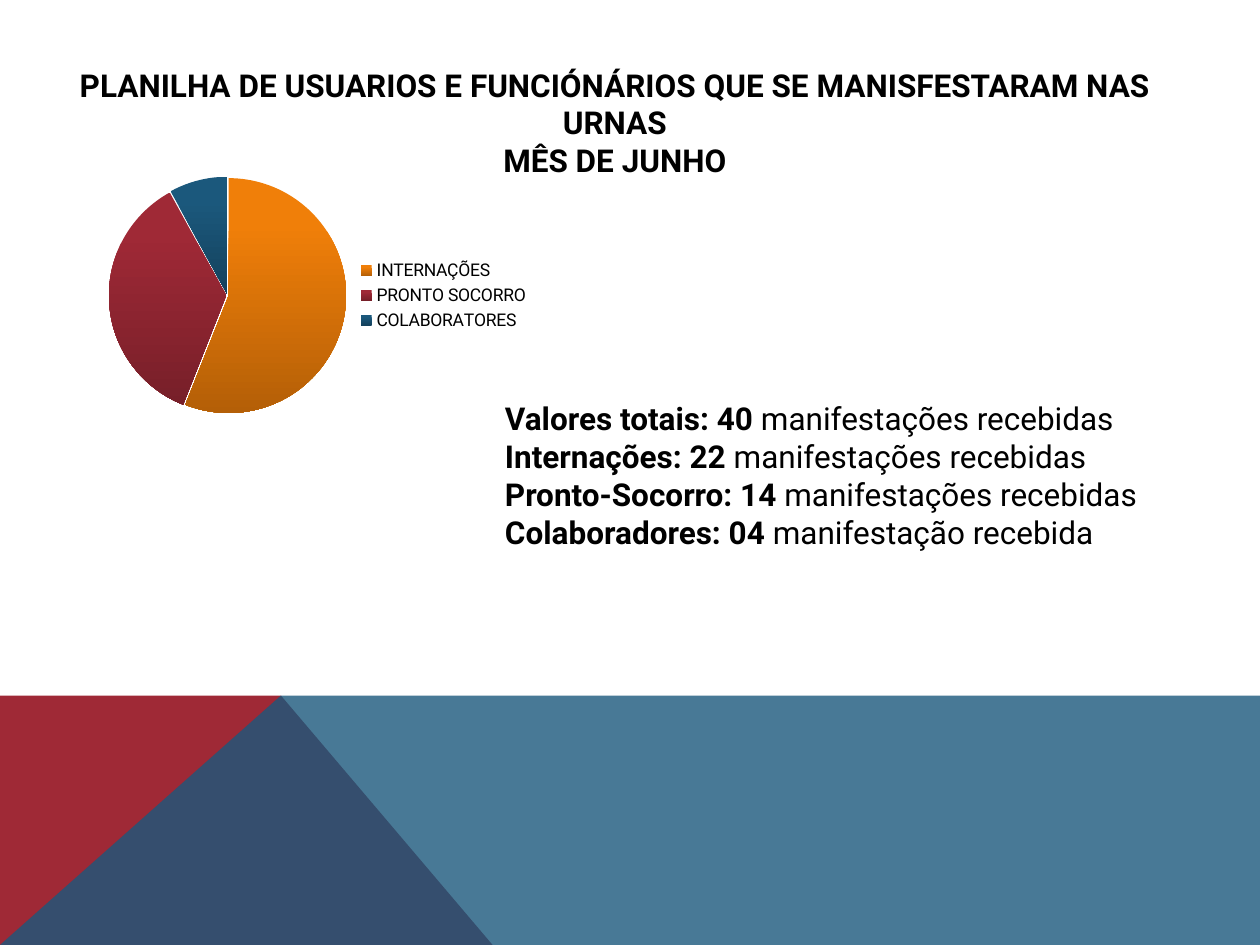
from lxml.etree import SubElement
from pptx import Presentation
from pptx.chart.data import CategoryChartData
from pptx.dml.color import RGBColor
from pptx.enum.chart import XL_CHART_TYPE, XL_LEGEND_POSITION
from pptx.enum.text import MSO_ANCHOR, MSO_AUTO_SIZE, PP_ALIGN
from pptx.oxml.ns import qn
from pptx.util import Inches, Pt

BLACK = RGBColor(0x00, 0x00, 0x00)
ORANGE = RGBColor(0xF0, 0x7F, 0x09)
RED = RGBColor(0x9F, 0x29, 0x36)
BLUE = RGBColor(0x1B, 0x58, 0x7C)

BAND_TOP = 5.52
PEAK = (2.23, BAND_TOP)


class SlideBuilder:
    font = "Roboto"
    text_size = Pt(18)
    legend_size = Pt(10)

    def __init__(self, slide):
        self.slide = slide

    def place(self, shape, left, top, width, height):
        shape.left, shape.top = Inches(left), Inches(top)
        shape.width, shape.height = Inches(width), Inches(height)

    def format_span(self, span, bold):
        span.font.name = self.font
        span.font.size = self.text_size
        span.font.color.rgb = BLACK
        span.font.bold = bold

    def polygon(self, points, color, opacity=None):
        corners = [(Inches(x), Inches(y)) for x, y in points]
        builder = self.slide.shapes.build_freeform(*corners[0])
        builder.add_line_segments(corners[1:], close=True)
        shape = builder.convert_to_shape()
        shape.shadow.inherit = False
        shape.line.fill.background()
        shape.fill.solid()
        shape.fill.fore_color.rgb = color
        if opacity is not None:
            tint = next(shape._element.spPr.iter(qn("a:srgbClr")))
            SubElement(tint, qn("a:alpha"), val=str(opacity * 1000))

    def title(self, lines, *area):
        box = self.slide.shapes.title
        self.place(box, *area)
        frame = box.text_frame
        frame.text = "\n".join(lines)
        frame.auto_size = MSO_AUTO_SIZE.NONE
        frame.vertical_anchor = MSO_ANCHOR.TOP
        for para in frame.paragraphs:
            para.alignment = PP_ALIGN.CENTER
            for span in para.runs:
                self.format_span(span, True)

    def totals(self, entries, *area):
        box = self.slide.shapes.add_textbox(*map(Inches, area))
        frame = box.text_frame
        frame.word_wrap = True
        for index, (label, detail) in enumerate(entries):
            para = frame.paragraphs[0] if index == 0 else frame.add_paragraph()
            for text, bold in ((label, True), (f" {detail}", False)):
                span = para.add_run()
                span.text = text
                self.format_span(span, bold)

    def pie(self, slices, plot_area, *area):
        data = CategoryChartData()
        data.categories = [name for name, _, _ in slices]
        data.add_series("Series 1", [value for _, value, _ in slices])
        chart = self.slide.shapes.add_chart(
            XL_CHART_TYPE.PIE, *map(Inches, area), data).chart
        chart.has_title = False
        chart.font.name = self.font
        chart.font.size = self.legend_size
        chart.font.color.rgb = BLACK
        chart.has_legend = True
        chart.legend.position = XL_LEGEND_POSITION.RIGHT
        chart.legend.include_in_layout = True
        plot = chart.plots[0]
        plot.vary_by_categories = True
        series = plot.series[0]
        for index, (_, _, color) in enumerate(slices):
            self.shade(series.points[index].format.fill, color)
        self.explode(series, 1)
        self.lay_out(plot, plot_area)

    def shade(self, fill, color):
        fill.gradient()
        fill.gradient_angle = 270
        start, end = fill.gradient_stops
        start.position, end.position = 0.2, 1
        start.color.rgb = color
        end.color.rgb = color
        end.color.brightness = -0.25

    def explode(self, series, percent):
        element = series._element
        explosion = SubElement(element, qn("c:explosion"), val=str(percent))
        element.find(qn("c:dPt")).addprevious(explosion)

    def lay_out(self, plot, plot_area):
        parent = plot._element.getparent()
        for old in parent.findall(qn("c:layout")):
            parent.remove(old)
        layout = SubElement(parent, qn("c:layout"))
        parent.insert(0, layout)
        manual = SubElement(layout, qn("c:manualLayout"))
        settings = [("layoutTarget", "inner"), ("xMode", "edge"), ("yMode", "edge")]
        settings += zip("xywh", plot_area)
        for name, value in settings:
            SubElement(manual, qn(f"c:{name}"), val=str(value))


def main():
    deck = Presentation()
    deck.slide_width, deck.slide_height = Inches(10), Inches(7.5)
    builder = SlideBuilder(deck.slides.add_slide(deck.slide_layouts[5]))

    builder.polygon([(0, 7.5), (0, BAND_TOP), PEAK, (3.91, 7.5)], RED)
    builder.polygon([(0, 7.5), PEAK, (10, BAND_TOP), (10, 7.5)], BLUE, 80)
    builder.pie(
        [("INTERNAÇÕES", 56, ORANGE),
         ("PRONTO SOCORRO", 36, RED),
         ("COLABORATORES", 8, BLUE)],
        (0.2, 0.07, 0.44, 0.86), 0, 1.25, 4.3, 2.19)
    builder.title(
        ["PLANILHA DE USUARIOS E FUNCIÓNÁRIOS QUE SE MANISFESTARAM NAS URNAS",
         "MÊS DE JUNHO"],
        0.23, 0.47, 9.3, 1.01)
    builder.totals(
        [("Valores totais: 40", "manifestações recebidas"),
         ("Internações: 22", "manifestações recebidas"),
         ("Pronto-Socorro: 14", "manifestações recebidas"),
         ("Colaboradores: 04", "manifestação recebida")],
        3.91, 3.12, 5.47, 1.31)
    deck.save("out.pptx")


if __name__ == "__main__":
    main()
